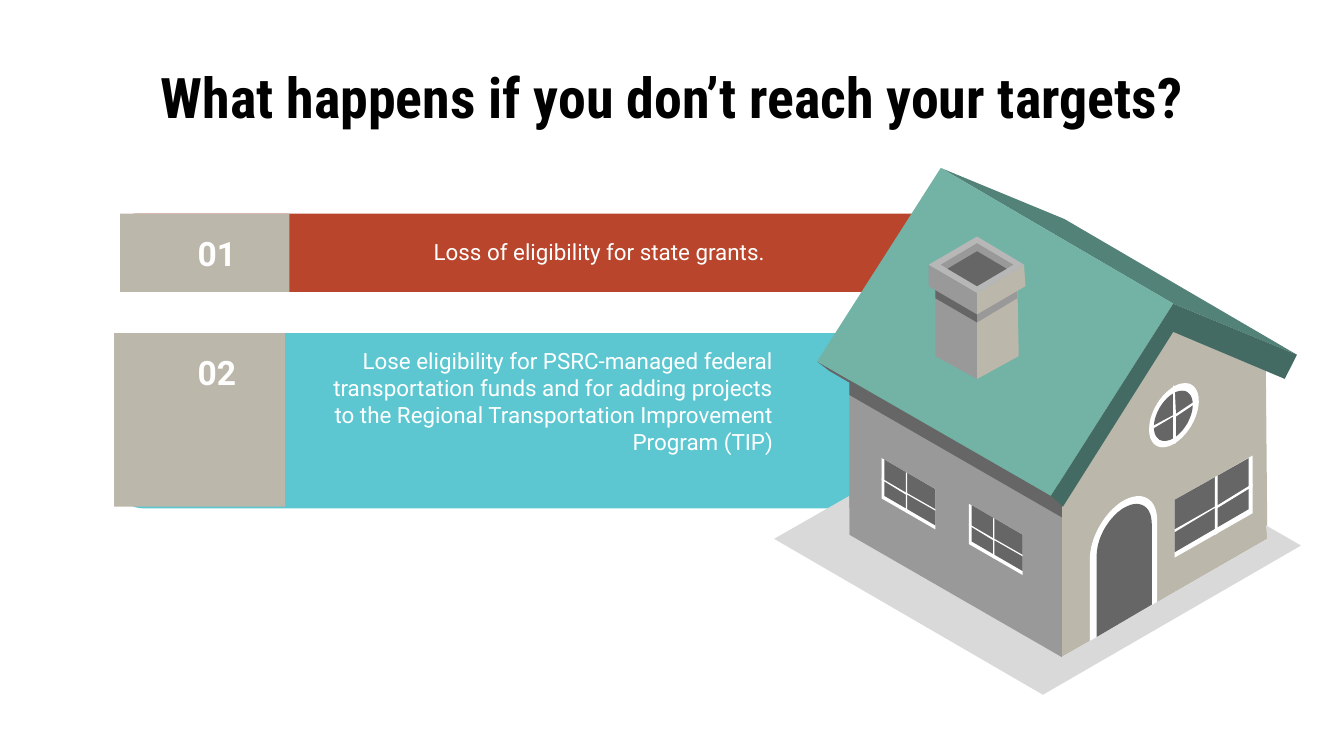
from math import cos, pi, sin

from pptx import Presentation
from pptx.dml.color import RGBColor
from pptx.enum.shapes import MSO_SHAPE
from pptx.enum.text import MSO_ANCHOR, PP_ALIGN
from pptx.util import Cm, Pt

WHITE, BLACK = "FFFFFF", "000000"
STONE, GREY, DARK, PALE = "BCB7AB", "999999", "666666", "D9D9D9"
RUST, AQUA = "B9462C", "5CC7D1"
ROOF, ROOF_BACK, ROOF_EDGE = "72B3A5", "528278", "446B63"
RIM = "B7B7B7"


def paint(sp, color):
    sp.shadow.inherit = False
    sp.fill.solid()
    sp.fill.fore_color.rgb = RGBColor.from_string(color)
    sp.line.fill.background()


def polygon(color, points):
    """Draw a closed outline; points are in hundredths of an inch."""
    grid = [(round(x * 10), round(y * 10)) for x, y in points]
    builder = s.shapes.build_freeform(*grid[0], scale=Cm(2.54) / 1000)
    builder.add_line_segments(grid[1:], close=True)
    paint(builder.convert_to_shape(), color)


prs = Presentation()
prs.slide_width, prs.slide_height = Cm(25.4), Cm(14.29)
s = prs.slides.add_slide(prs.slide_layouts[6])

# Front wall, behind the bars
polygon(STONE, [(866, 242), (942, 273), (942, 284), (943, 401), (790, 489), (790, 362)])

# Bars and their number tabs
bars = [
    (MSO_SHAPE.ROUNDED_RECTANGLE, RUST, 2.31, 4.04, 16.23, 1.48),
    (MSO_SHAPE.RECTANGLE, STONE, 2.27, 4.04, 3.2, 1.48),
    (MSO_SHAPE.ROUNDED_RECTANGLE, AQUA, 2.16, 6.3, 16.36, 3.31),
    (MSO_SHAPE.RECTANGLE, STONE, 2.16, 6.3, 3.23, 3.28),
]
for kind, color, *box in bars:
    paint(s.shapes.add_shape(kind, *map(Cm, box)), color)

# Texts
texts = [
    ("What happens if you don’t reach your targets?", "Roboto Condensed", 30, True, BLACK,
     PP_ALIGN.CENTER, 1.27, 1.14, 22.86, 1.35),
    ("01", "Roboto", 18, True, WHITE, PP_ALIGN.CENTER, 2.87, 4.04, 2.46, 1.5),
    ("Loss of eligibility for state grants.", "Roboto", 12, False, WHITE,
     PP_ALIGN.RIGHT, 6.38, 4.04, 8.33, 1.45),
    ("02", "Roboto", 18, True, WHITE, PP_ALIGN.CENTER, 2.87, 6.25, 2.46, 1.57),
    ("Lose eligibility for PSRC-managed federal transportation funds and for adding "
     "projects to the Regional Transportation Improvement Program (TIP)",
     "Roboto", 12, False, WHITE, PP_ALIGN.RIGHT, 5.82, 6.83, 9.04, 1.5),
]
for text, font, size, bold, color, align, *box in texts:
    tf = s.shapes.add_textbox(*map(Cm, box)).text_frame
    tf.word_wrap = True
    tf.vertical_anchor = MSO_ANCHOR.MIDDLE
    tf.margin_left = tf.margin_right = tf.margin_top = tf.margin_bottom = Cm(0.25)
    p = tf.paragraphs[0]
    p.text = text
    p.alignment = align
    p.font.name, p.font.size, p.font.bold = font, Pt(size), bold
    p.font.color.rgb = RGBColor.from_string(color)

# Ground, side wall and roof
polygon(PALE, [(632, 369), (632, 398), (790, 489), (943, 401), (942, 391),
               (968, 406), (776, 517), (576, 401)])
polygon(GREY, [(632, 270), (790, 362), (790, 489), (632, 398)])
polygon(DARK, [(632, 282), (782, 369), (787, 361), (790, 362), (790, 385), (632, 294)])
polygon(ROOF_BACK, [(700, 125), (792, 163), (965, 264), (873, 226)])
polygon(DARK, [(608, 269), (782, 369), (791, 377), (617, 276)])
polygon(ROOF, [(700, 125), (873, 226), (782, 369), (608, 269)])
polygon(ROOF_EDGE, [(873, 226), (965, 264), (956, 282), (873, 247), (791, 377), (782, 369)])

# Door and round window: circles skewed onto the front wall
arcs = [
    (WHITE, 836, 401.5, 25, pi, [(811, 477), (861, 448)]),
    (DARK, 836.5, 401.5, 20.5, pi, [(816, 474), (857, 450)]),
    (WHITE, 873.5, 309, 18.5, 2 * pi, []),
    (DARK, 873, 309.5, 14.5, 2 * pi, []),
]
for color, cx, cy, half, sweep, legs in arcs:
    angles = [sweep * i / 40 for i in range(41)]
    polygon(color, [(cx + half * cos(a), cy - half * (1.155 * sin(a) + 0.577 * cos(a)))
                    for a in angles] + legs)
polygon(WHITE, [(874, 287), (875, 308), (887, 300), (892, 298), (892, 300), (887, 302),
                (875, 310), (875, 330), (873, 330), (873, 310), (858, 319), (855, 321),
                (855, 320), (858, 317), (873, 309), (873, 287)])

# Front window
polygon(WHITE, [(932, 339), (932, 382), (874, 415), (874, 372)])
polygon(DARK, [(929, 341), (929, 379), (874, 411), (874, 372)])
polygon(WHITE, [(906, 354), (906, 376), (932, 360), (932, 362), (906, 378), (906, 397),
                (904, 398), (904, 378), (874, 396), (874, 394), (904, 377), (904, 355)])

# Two equal side windows: frame, glass, bars
side_window = [
    (WHITE, [(0, 0), (40, 23), (40, 53), (0, 30)]),
    (DARK, [(2, 1), (40, 23), (40, 50), (2, 28)]),
    (WHITE, [(18, 10.5), (19, 11), (19, 26), (40, 38), (40, 39), (19, 27), (19, 41),
             (18, 40), (18, 27), (0, 16), (0, 15), (18, 25.5)]),
]
for left, top in [(721, 375), (656, 341)]:
    for color, points in side_window:
        polygon(color, [(left + x, top + y) for x, y in points])

# Chimney: stack, shade under the cap, cap, opening
for color, points in [
    (GREY, [(696, 210), (727, 228), (727, 282), (696, 265)]),
    (STONE, [(757, 210), (758, 265), (727, 282), (727, 228)]),
    (DARK, [(696, 210), (727, 228), (727, 240), (696, 222)]),
    (GREY, [(757, 210), (757, 222), (727, 240), (727, 228)]),
    (GREY, [(691, 197), (727, 218), (727, 234), (691, 213)]),
    (STONE, [(762, 197), (763, 213), (727, 234), (727, 218)]),
    (RIM, [(727, 176), (762, 197), (727, 218), (691, 197)]),
    (GREY, [(727, 181), (754, 197), (727, 213), (700, 197)]),
    (DARK, [(727, 187), (749, 200), (727, 213), (705, 200)]),
]:
    polygon(color, points)

prs.save("out.pptx")
